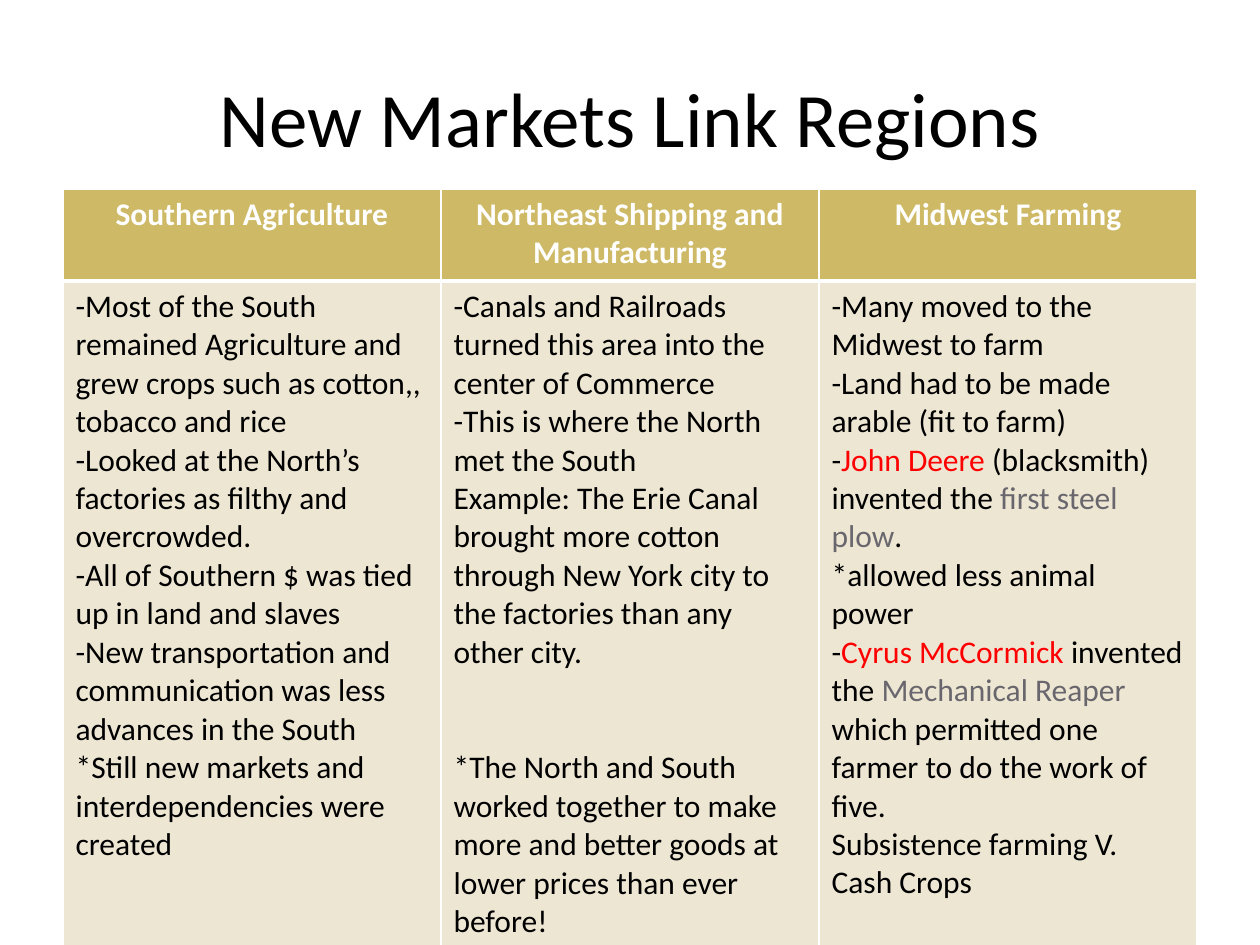
"""Build the slide comparing the regions linked by new markets."""
from dataclasses import dataclass

from lxml.etree import SubElement
from pptx import Presentation
from pptx.dml.color import RGBColor
from pptx.enum.text import MSO_ANCHOR, PP_ALIGN
from pptx.oxml.ns import qn
from pptx.util import Inches, Pt


@dataclass(frozen=True)
class Theme:
    font: str = "Calibri"
    title_size: int = 44
    table_size: int = 18
    text: str = "000000"
    light: str = "FFFFFF"
    person: str = "FF0000"
    invention: str = "69676D"
    header_fill: str = "CEB966"
    body_fill: str = "EDE6D3"
    thin_rule: int = 1
    thick_rule: int = 3
    section_gap: int = 44


THEME = Theme()
TITLE = "New Markets Link Regions"
HEADERS = ["Southern Agriculture", "Northeast Shipping and Manufacturing", "Midwest Farming"]
REGIONS = [
    [
        "-Most of the South remained Agriculture and grew crops such as cotton,, tobacco and rice",
        "-Looked at the North’s factories as filthy and overcrowded.",
        "-All of Southern $ was tied up in land and slaves",
        "-New transportation and communication was less advances in the South",
        "*Still new markets and interdependencies were created",
    ],
    [
        "-Canals and Railroads turned this area into the center of Commerce",
        "-This is where the North met the South",
        "Example: The Erie Canal brought more cotton through New York city to the factories "
        "than any other city.",
        "*The North and South worked together to make more and better goods at lower prices "
        "than ever before!",
    ],
    [
        "-Many moved to the Midwest to farm",
        "-Land had to be made arable (fit to farm)",
        [
            ("-", THEME.text),
            ("John Deere ", THEME.person),
            ("(blacksmith) invented the ", THEME.text),
            ("first steel plow", THEME.invention),
            (".", THEME.text),
        ],
        "*allowed less animal power",
        [
            ("-", THEME.text),
            ("Cyrus McCormick ", THEME.person),
            ("invented the ", THEME.text),
            ("Mechanical Reaper ", THEME.invention),
            ("which permitted one farmer to do the work of five.", THEME.text),
        ],
        "Subsistence farming V. Cash Crops",
    ],
]
SPACED_PARAGRAPH = REGIONS[1][-1]
ROW_HEIGHTS = [0.73, 5.42]
TABLE_LEFT, TABLE_TOP, TABLE_WIDTH = 0.5, 1.5, 9


def add_run(paragraph, text, size, color, bold=False):
    run = paragraph.add_run()
    run.text = text
    run.font.name = THEME.font
    run.font.size = Pt(size)
    run.font.bold = bold
    run.font.color.rgb = RGBColor.from_string(color)


def add_title(slide):
    title = slide.shapes.title
    title.left, title.top = Inches(0.5), Inches(0.3)
    title.width, title.height = Inches(9), Inches(1.25)
    title.text_frame.vertical_anchor = MSO_ANCHOR.MIDDLE
    paragraph = title.text_frame.paragraphs[0]
    paragraph.alignment = PP_ALIGN.CENTER
    add_run(paragraph, TITLE, THEME.title_size, THEME.text)


def style_cell(cell, fill, thick_side):
    properties = cell._tc.get_or_add_tcPr()
    for side in ("lnL", "lnR", "lnT", "lnB"):
        width = THEME.thick_rule if side == thick_side else THEME.thin_rule
        line = SubElement(properties, qn(f"a:{side}"), w=str(Pt(width)))
        SubElement(SubElement(line, qn("a:solidFill")), qn("a:srgbClr"), val=THEME.light)
    cell.fill.solid()
    cell.fill.fore_color.rgb = RGBColor.from_string(fill)


def fill_body(cell, paragraphs):
    frame = cell.text_frame
    for index, content in enumerate(paragraphs):
        paragraph = frame.add_paragraph() if index else frame.paragraphs[0]
        if content == SPACED_PARAGRAPH:
            paragraph.space_before = Pt(THEME.section_gap)
        runs = [(content, THEME.text)] if isinstance(content, str) else content
        for text, color in runs:
            add_run(paragraph, text, THEME.table_size, color)


def add_region_table(slide):
    frame = slide.shapes.add_table(
        len(ROW_HEIGHTS), len(HEADERS), Inches(TABLE_LEFT), Inches(TABLE_TOP),
        Inches(TABLE_WIDTH), Inches(sum(ROW_HEIGHTS)),
    )
    table = frame.table
    for row, height in zip(table.rows, ROW_HEIGHTS):
        row.height = Inches(height)
    for column, (header, paragraphs) in enumerate(zip(HEADERS, REGIONS)):
        header_cell, body_cell = table.cell(0, column), table.cell(1, column)
        style_cell(header_cell, THEME.header_fill, "lnB")
        style_cell(body_cell, THEME.body_fill, "lnT")
        paragraph = header_cell.text_frame.paragraphs[0]
        paragraph.alignment = PP_ALIGN.CENTER
        add_run(paragraph, header, THEME.table_size, THEME.light, bold=True)
        fill_body(body_cell, paragraphs)


def main():
    presentation = Presentation()
    presentation.slide_width, presentation.slide_height = Inches(10), Inches(7.5)
    slide = presentation.slides.add_slide(presentation.slide_layouts.get_by_name("Title Only"))
    add_title(slide)
    add_region_table(slide)
    presentation.save("out.pptx")


if __name__ == "__main__":
    main()
